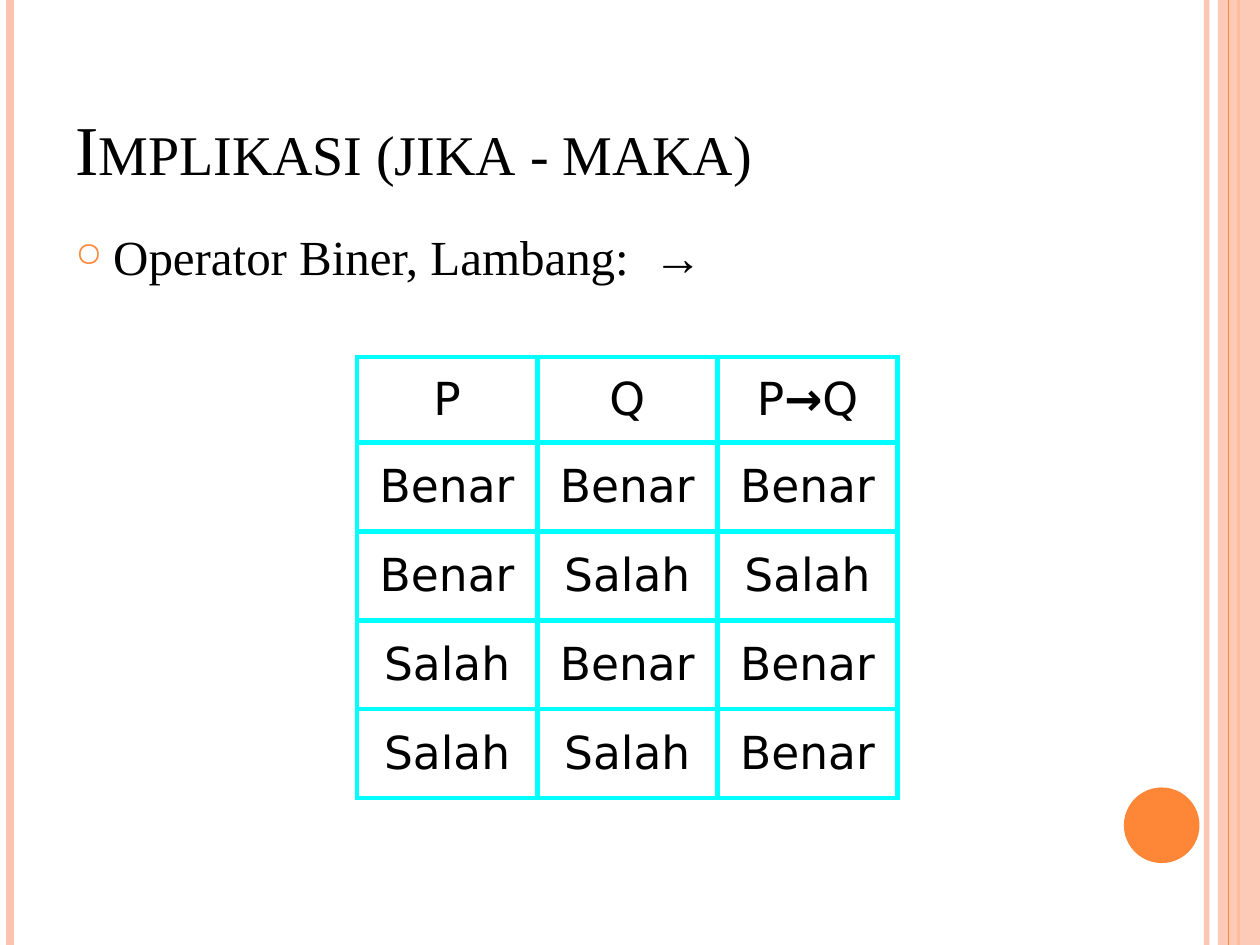
"""Build the slide on the implication operator and its truth table."""
from dataclasses import dataclass
from typing import Optional

from lxml.etree import SubElement
from pptx import Presentation
from pptx.dml.color import RGBColor
from pptx.enum.shapes import MSO_CONNECTOR as Connector, MSO_SHAPE as Preset
from pptx.enum.text import MSO_ANCHOR as Anchor, PP_ALIGN as Align
from pptx.oxml.ns import qn
from pptx.util import Pt

PEACH = RGBColor(0xFE, 0xC3, 0xAE)
ORANGE = RGBColor(0xFE, 0x86, 0x37)
CYAN = RGBColor(0x00, 0xFF, 0xFF)
BLACK = RGBColor(0x00, 0x00, 0x00)
SLIDE_WIDTH, SLIDE_HEIGHT = 720, 540
TITLE_FORMAT = {"name": "Times New Roman", "size": Pt(40), "bold": False}
BODY_FORMAT = {"name": "Times New Roman", "size": Pt(28), "bold": False}
CELL_FORMAT = {"name": "DejaVu Sans", "size": Pt(26), "bold": False}
ARROW = "→"
HEADINGS = ("P", "Q", "P→Q")
TRUTH_VALUES = (
    ("Benar", "Benar", "Benar"),
    ("Benar", "Salah", "Salah"),
    ("Salah", "Benar", "Benar"),
    ("Salah", "Salah", "Benar"),
)
COLUMN_WIDTH, HEADING_HEIGHT, VALUE_HEIGHT = 103, 49, 50.75


@dataclass(frozen=True)
class Stripe:
    """A full-height vertical line."""
    x: float
    weight: float
    color: RGBColor
    opacity: Optional[int] = None


@dataclass(frozen=True)
class Panel:
    """A filled preset shape without outline."""
    preset: Preset
    left: float
    top: float
    width: float
    height: float
    color: RGBColor
    opacity: Optional[int] = None


DECORATIONS = (
    Stripe(689.5, 3, PEACH, 93),
    Stripe(5.5, 4.5, PEACH),
    Stripe(707.75, 1.5, ORANGE),
    Panel(Preset.RECTANGLE, 696, 0, 24, SLIDE_HEIGHT, PEACH, 87),
    Stripe(702, 0.75, ORANGE),
    Panel(Preset.OVAL, 642.25, 450, 43.2, 43.2, ORANGE),
)


def set_opacity(properties, percent: Optional[int]) -> None:
    """Make the first solid colour below the properties translucent."""
    if percent is not None:
        color = next(properties.iter(qn("a:srgbClr")))
        SubElement(color, qn("a:alpha"), val=str(percent * 1000))


def draw_stripe(slide, stripe: Stripe) -> None:
    """Draw one stripe from the top edge to the bottom edge."""
    line = slide.shapes.add_connector(
        Connector.STRAIGHT, Pt(stripe.x), Pt(0), Pt(stripe.x), Pt(SLIDE_HEIGHT))
    line.line.color.rgb = stripe.color
    line.line.width = Pt(stripe.weight)
    properties = line._element.spPr
    set_opacity(properties, stripe.opacity)
    SubElement(properties, qn("a:effectLst"))


def draw_panel(slide, panel: Panel) -> None:
    """Draw one filled shape."""
    bounds = (panel.left, panel.top, panel.width, panel.height)
    shape = slide.shapes.add_shape(panel.preset, *map(Pt, bounds))
    shape.shadow.inherit = False
    shape.fill.solid()
    shape.fill.fore_color.rgb = panel.color
    shape.line.fill.background()
    set_opacity(shape._element.spPr, panel.opacity)


def write_text(paragraph, text: str, formats: dict) -> None:
    """Write the text in runs, with the arrow in bold."""
    before, arrow, after = text.partition(ARROW)
    for part in filter(None, (before, arrow, after)):
        run = paragraph.add_run()
        run.text = part
        for attribute, value in {**formats, "bold": part == ARROW}.items():
            setattr(run.font, attribute, value)
        run.font.color.rgb = BLACK


def add_text_frame(slide, top: float, height: float, anchor: Anchor):
    """Add a wrapping text box in the content column."""
    frame = slide.shapes.add_textbox(
        Pt(36), Pt(top), Pt(588), Pt(height)).text_frame
    frame.word_wrap = True
    frame.vertical_anchor = anchor
    return frame


def add_title(slide) -> None:
    """Add the title in small capitals."""
    title = add_text_frame(slide, 21.6, 90, Anchor.BOTTOM).paragraphs[0]
    write_text(title, "Implikasi (jika - maka)", TITLE_FORMAT)
    for run in title.runs:
        run.font._element.set("cap", "small")


def add_operator_line(slide) -> None:
    """Add the bulleted line that names the operator."""
    operator = add_text_frame(slide, 126, 384, Anchor.TOP).paragraphs[0]
    properties = operator._p.get_or_add_pPr()
    properties.set("marL", str(Pt(21.6)))
    properties.set("indent", str(Pt(-21.6)))
    bullet_color = SubElement(properties, qn("a:buClr"))
    SubElement(bullet_color, qn("a:srgbClr"), val=str(ORANGE))
    SubElement(properties, qn("a:buSzPct"), val="70000")
    SubElement(properties, qn("a:buChar"), char="○")
    write_text(operator, "Operator Biner, Lambang:  →", BODY_FORMAT)


def set_borders(cell, color: RGBColor, weight: float) -> None:
    """Give the cell the same border on all sides."""
    properties = cell._tc.get_or_add_tcPr()
    for position, side in enumerate(("lnL", "lnR", "lnT", "lnB")):
        border = SubElement(properties, qn(f"a:{side}"), w=str(Pt(weight)))
        fill = SubElement(border, qn("a:solidFill"))
        SubElement(fill, qn("a:srgbClr"), val=str(color))
        properties.insert(position, border)


def add_truth_table(slide) -> None:
    """Add the truth table of the implication."""
    rows = (HEADINGS, *TRUTH_VALUES)
    heights = [HEADING_HEIGHT] + [VALUE_HEIGHT] * len(TRUTH_VALUES)
    table = slide.shapes.add_table(
        len(rows), len(HEADINGS), Pt(204), Pt(204),
        Pt(COLUMN_WIDTH * len(HEADINGS)), Pt(sum(heights))).table
    table.first_row = table.horz_banding = False
    for column in table.columns:
        column.width = Pt(COLUMN_WIDTH)
    for row, height, values in zip(table.rows, heights, rows):
        row.height = Pt(height)
        for cell, value in zip(row.cells, values):
            cell.fill.background()
            cell.vertical_anchor = Anchor.MIDDLE
            set_borders(cell, CYAN, 3)
            entry = cell.text_frame.paragraphs[0]
            entry.alignment = Align.CENTER
            write_text(entry, value, CELL_FORMAT)


def main() -> None:
    """Build and save the presentation."""
    presentation = Presentation()
    presentation.slide_width = Pt(SLIDE_WIDTH)
    presentation.slide_height = Pt(SLIDE_HEIGHT)
    slide = presentation.slides.add_slide(presentation.slide_layouts[6])
    for decoration in DECORATIONS:
        draw = draw_stripe if isinstance(decoration, Stripe) else draw_panel
        draw(slide, decoration)
    add_title(slide)
    add_operator_line(slide)
    add_truth_table(slide)
    presentation.save("out.pptx")


if __name__ == "__main__":
    main()
